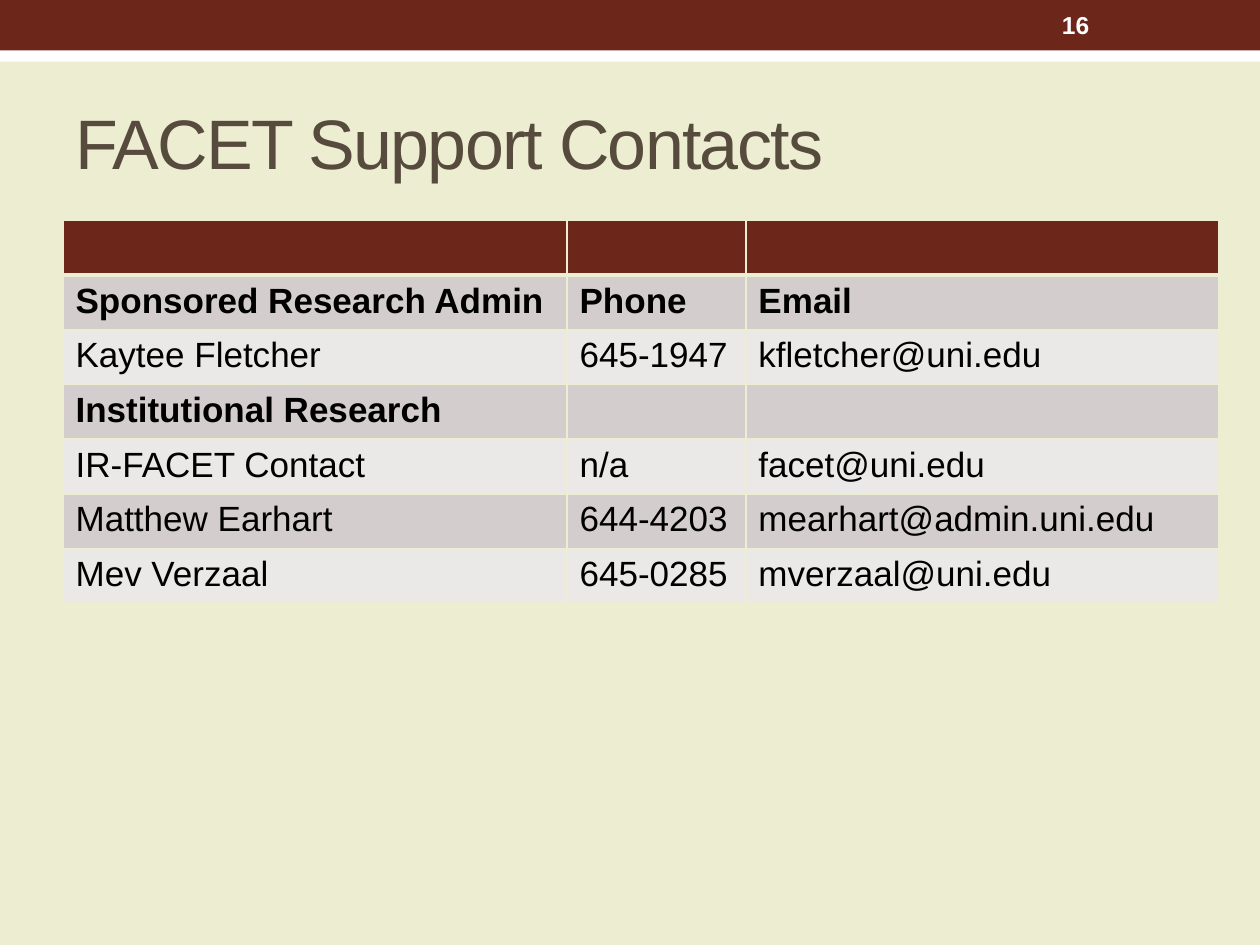
import pptx
import pptx.util
import pptx.dml.color
import pptx.enum.shapes
import pptx.enum.text
import pptx.oxml
import pptx.oxml.ns
from pptx.util import Inches

CREAM, MAROON, WHITE = "ECEDD1", "6C261A", "FFFFFF"
BANDS = ("D4CDCD", "EBE8E8")
CONTACTS = [
    ("", "", ""),
    ("Sponsored Research Admin", "Phone", "Email"),
    ("Kaytee Fletcher", "645-1947", "kfletcher@uni.edu"),
    ("Institutional Research", "", ""),
    ("IR-FACET Contact", "n/a", "facet@uni.edu"),
    ("Matthew Earhart", "644-4203", "mearhart@admin.uni.edu"),
    ("Mev Verzaal", "645-0285", "mverzaal@uni.edu"),
]
HEADING_ROWS = (1, 3)


def color(hex_string):
    return pptx.dml.color.RGBColor.from_string(hex_string)


def paint(target, hex_string):
    target.fill.solid()
    target.fill.fore_color.rgb = color(hex_string)


def style(para, size, hex_string, bold=False):
    para.font.name = "Arial"
    para.font.size = pptx.util.Pt(size)
    para.font.bold = bold
    para.font.color.rgb = color(hex_string)


def add_bar(page, left, top, width, height, fill):
    bar = page.shapes.add_shape(
        pptx.enum.shapes.MSO_SHAPE.RECTANGLE, left, top, width, height)
    paint(bar, fill)
    bar.line.fill.background()
    bar.shadow.inherit = False


def add_page_number(page, left, top, width, height, number):
    box = page.shapes.add_textbox(left, top, width, height)
    frame = box.text_frame
    frame.word_wrap = True
    frame.vertical_anchor = pptx.enum.text.MSO_ANCHOR.MIDDLE
    frame.text = number
    style(frame.paragraphs[0], 14, WHITE, bold=True)


def place_title(page, left, top, width, height, text):
    title = page.shapes.title
    title.left, title.top, title.width, title.height = left, top, width, height
    frame = title.text_frame
    frame.text = text
    frame.vertical_anchor = pptx.enum.text.MSO_ANCHOR.MIDDLE
    para = frame.paragraphs[0]
    para.alignment = pptx.enum.text.PP_ALIGN.LEFT
    style(para, 40, "564B3C")
    # Tighten the letters by one point
    para.runs[0].font._element.set("spc", "-100")


def set_borders(cell, bottom):
    properties = cell._tc.get_or_add_tcPr()
    widths = {"lnL": 1, "lnR": 1, "lnT": 1, "lnB": bottom}
    # Border lines come before the cell's fill
    for position, (side, points) in enumerate(widths.items()):
        properties.insert(position, pptx.oxml.parse_xml(
            f'<a:{side} {pptx.oxml.ns.nsdecls("a")} w="{pptx.util.Pt(points)}">'
            f'<a:solidFill><a:srgbClr val="{CREAM}"/></a:solidFill></a:{side}>'))


def add_contact_table(page, left, top, width, height):
    table = page.shapes.add_table(
        len(CONTACTS), 3, left, top, width, height).table
    for column, share in zip(table.columns, (4, 1.42, 3.75)):
        column.width = int(width * share / 9.17)
    for row, texts in enumerate(CONTACTS):
        for column, text in enumerate(texts):
            cell = table.cell(row, column)
            paint(cell, BANDS[(row - 1) % 2] if row else MAROON)
            set_borders(cell, bottom=1 if row else 3)
            cell.text = text
            style(cell.text_frame.paragraphs[0], 20, "000000",
                  bold=row in HEADING_ROWS)


def main():
    deck = pptx.Presentation()
    deck.slide_width, deck.slide_height = Inches(10), Inches(7.5)
    page = deck.slides.add_slide(deck.slide_layouts[5])
    paint(page.background, CREAM)

    # Top band with the page number
    add_bar(page, 0, Inches(0.24), deck.slide_width, Inches(0.25), WHITE)
    add_bar(page, 0, 0, deck.slide_width, Inches(0.4), MAROON)
    add_page_number(page, Inches(8.33), Inches(0.02),
                    Inches(1.17), Inches(0.36), "16")

    # Title and contacts
    place_title(page, Inches(0.5), Inches(0.58), Inches(9), Inches(1.08),
                "FACET Support Contacts")
    add_contact_table(page, Inches(0.5), Inches(1.75), Inches(9.17),
                      Inches(0.41) * len(CONTACTS))
    deck.save("out.pptx")


if __name__ == "__main__":
    main()
